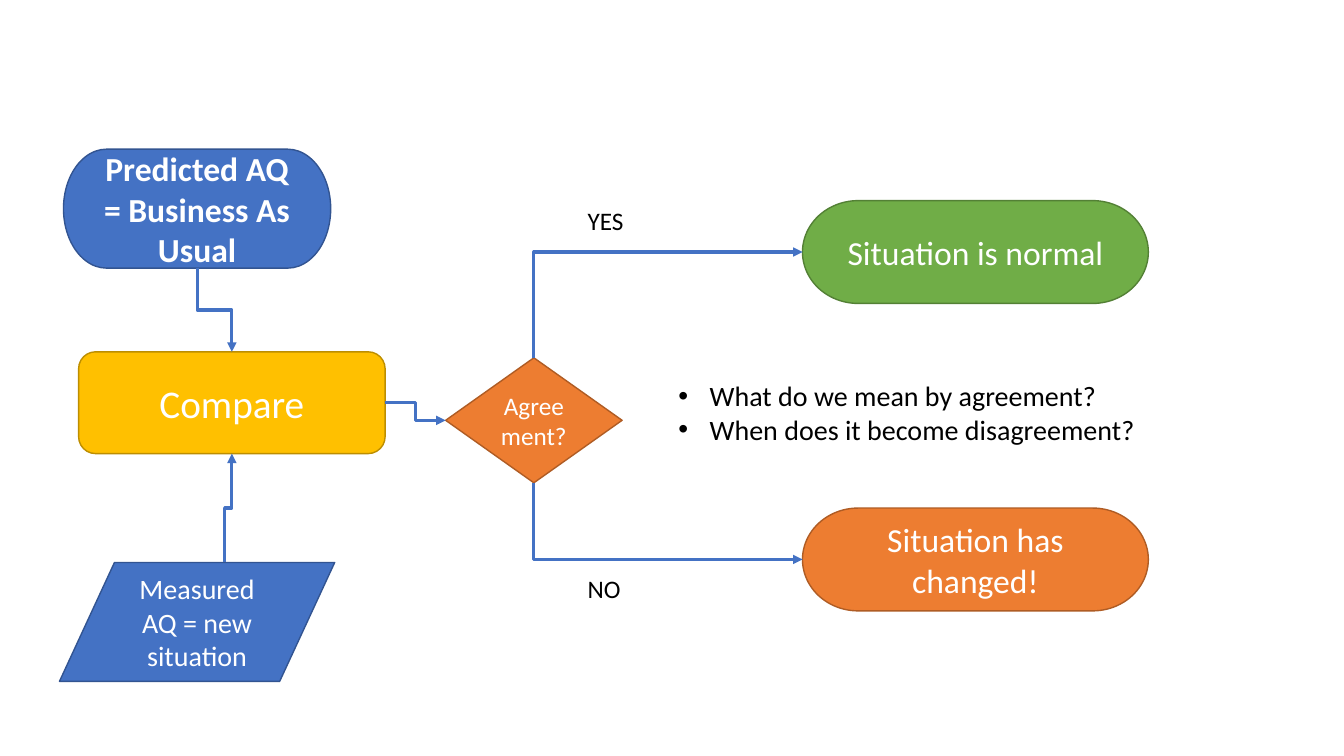
from lxml.etree import SubElement
from pptx import Presentation
from pptx.dml.color import RGBColor
from pptx.enum.shapes import MSO_CONNECTOR, MSO_SHAPE
from pptx.enum.text import MSO_ANCHOR, MSO_AUTO_SIZE, PP_ALIGN
from pptx.oxml.ns import qn
from pptx.util import Pt

PX = 9144  # 100 px to the inch
SLIDE_SIZE = (1333, 750)
FONT = "Calibri"

WHITE = RGBColor(0xFF, 0xFF, 0xFF)
BLACK = RGBColor(0x00, 0x00, 0x00)
BLUE = RGBColor(0x44, 0x72, 0xC4)
DARK_BLUE = RGBColor(0x32, 0x54, 0x91)
GOLD = RGBColor(0xFF, 0xC0, 0x00)
DARK_GOLD = RGBColor(0xBD, 0x8E, 0x00)
ORANGE = RGBColor(0xED, 0x7D, 0x31)
DARK_ORANGE = RGBColor(0xAF, 0x5C, 0x24)
GREEN = RGBColor(0x70, 0xAD, 0x47)
DARK_GREEN = RGBColor(0x53, 0x80, 0x35)

TERMINATOR = MSO_SHAPE.FLOWCHART_TERMINATOR
TOP, LEFT, BOTTOM, RIGHT = range(4)

# name: (preset, box in px, fill, outline, paragraphs, font format)
STEPS = {
    "predicted": (TERMINATOR, (63, 148, 265, 118), BLUE, DARK_BLUE,
                  ["Predicted AQ", "= Business As Usual"], {"size": Pt(24), "bold": True}),
    "measured": (MSO_SHAPE.FLOWCHART_DATA, (59, 558, 273, 118), BLUE, DARK_BLUE,
                 ["Measured AQ = new situation"], {"size": Pt(20)}),
    "compare": (MSO_SHAPE.FLOWCHART_ALTERNATE_PROCESS, (78, 349, 304, 101), GOLD, DARK_GOLD,
                ["Compare"], {"size": Pt(28)}),
    "agreement": (MSO_SHAPE.FLOWCHART_DECISION, (442, 355, 175, 124), ORANGE, DARK_ORANGE,
                  ["Agreement?"], {"size": Pt(18)}),
    "normal": (TERMINATOR, (796, 199, 343, 102), GREEN, DARK_GREEN,
               ["Situation is normal"], {"size": Pt(24)}),
    "changed": (TERMINATOR, (796, 504, 343, 102), ORANGE, DARK_ORANGE,
                ["Situation has changed!"], {"size": Pt(24)}),
}

# (from step, side, to step, side)
ARROWS = [
    ("predicted", BOTTOM, "compare", TOP),
    ("measured", TOP, "compare", BOTTOM),
    ("compare", RIGHT, "agreement", LEFT),
    ("agreement", TOP, "normal", LEFT),
    ("agreement", BOTTOM, "changed", LEFT),
]

# (box in px, paragraphs, size, bulleted)
NOTES = [
    ((573, 199, 106, 40), ["YES"], 18, False),
    ((573, 564, 106, 40), ["NO"], 18, False),
    ((663, 371, 499, 77),
     ["What do we mean by agreement?", "When does it become disagreement?"], 20, True),
]
BULLET_INDENT = 31


def scaled(box):
    return [round(value * PX) for value in box]


def add_bullet(paragraph):
    properties = paragraph._p.get_or_add_pPr()
    properties.set("marL", str(BULLET_INDENT * PX))
    properties.set("indent", str(-BULLET_INDENT * PX))
    SubElement(properties, qn("a:buFont")).set("typeface", "Arial")
    SubElement(properties, qn("a:buChar")).set("char", "•")


def write(text_frame, lines, font_format, alignment, bulleted=False):
    text_frame.word_wrap = True
    for index, line in enumerate(lines):
        paragraph = text_frame.add_paragraph() if index else text_frame.paragraphs[0]
        paragraph.alignment = alignment
        if bulleted:
            add_bullet(paragraph)
        run = paragraph.add_run()
        run.text = line
        color = font_format["color"]
        run.font.color.rgb = color
        for name, value in font_format.items():
            if name != "color":
                setattr(run.font, name, value)


def side_point(name, side):
    preset, (left, top, width, height) = STEPS[name][:2]
    # The slanted box has its top joint at six tenths of its width
    across = 0.6 if preset == MSO_SHAPE.FLOWCHART_DATA else 0.5
    x, y = {TOP: (across, 0), LEFT: (0, 0.5), BOTTOM: (across, 1), RIGHT: (1, 0.5)}[side]
    return left + width * x, top + height * y


def add_arrow(slide, shapes, start, start_side, end, end_side):
    x1, y1 = side_point(start, start_side)
    x2, y2 = side_point(end, end_side)
    connector = slide.shapes.add_connector(MSO_CONNECTOR.ELBOW, *scaled((x1, y1, x2, y2)))
    connector.begin_connect(shapes[start], start_side)
    connector.end_connect(shapes[end], end_side)

    # An elbow that leaves vertically is a horizontal one turned about its centre
    width, height = abs(x2 - x1), abs(y2 - y1)
    upright = start_side in (TOP, BOTTOM)
    if upright:
        width, height = height, width
    box = ((x1 + x2 - width) / 2, (y1 + y2 - height) / 2, width, height)
    for name, value in zip(("left", "top", "width", "height"), scaled(box)):
        setattr(connector, name, value)
    properties = connector._element.spPr
    transform = properties.find(qn("a:xfrm"))
    for flip in ("flipH", "flipV"):
        transform.attrib.pop(flip, None)
    if upright:
        transform.set("rot", str((90 if start_side == BOTTOM else 270) * 60000))
        if start_side == BOTTOM:
            transform.set("flipV", "1")
        if end_side == LEFT:
            properties.find(qn("a:prstGeom")).set("prst", "bentConnector2")

    connector.line.color.rgb = BLUE
    connector.line.width = Pt(2.25)
    SubElement(connector.line._get_or_add_ln(), qn("a:tailEnd")).set("type", "triangle")
    SubElement(properties, qn("a:effectLst"))


def main():
    presentation = Presentation()
    presentation.slide_width, presentation.slide_height = scaled(SLIDE_SIZE)
    slide = presentation.slides.add_slide(presentation.slide_layouts[6])

    # Flowchart steps
    shapes = {}
    for name, (preset, box, fill, outline, lines, font_format) in STEPS.items():
        shape = slide.shapes.add_shape(preset, *scaled(box))
        shape.shadow.inherit = False
        shape.fill.solid()
        shape.fill.fore_color.rgb = fill
        shape.line.color.rgb = outline
        shape.line.width = Pt(1)
        shape.text_frame.vertical_anchor = MSO_ANCHOR.MIDDLE
        write(shape.text_frame, lines, {"name": FONT, "color": WHITE, **font_format},
              PP_ALIGN.CENTER)
        shapes[name] = shape

    # Arrows between the steps
    for arrow in ARROWS:
        add_arrow(slide, shapes, *arrow)

    # Branch labels and questions
    for box, lines, size, bulleted in NOTES:
        text_box = slide.shapes.add_textbox(*scaled(box))
        text_box.text_frame.auto_size = MSO_AUTO_SIZE.SHAPE_TO_FIT_TEXT
        write(text_box.text_frame, lines, {"name": FONT, "color": BLACK, "size": Pt(size)},
              PP_ALIGN.LEFT, bulleted)

    presentation.save("out.pptx")


if __name__ == "__main__":
    main()
